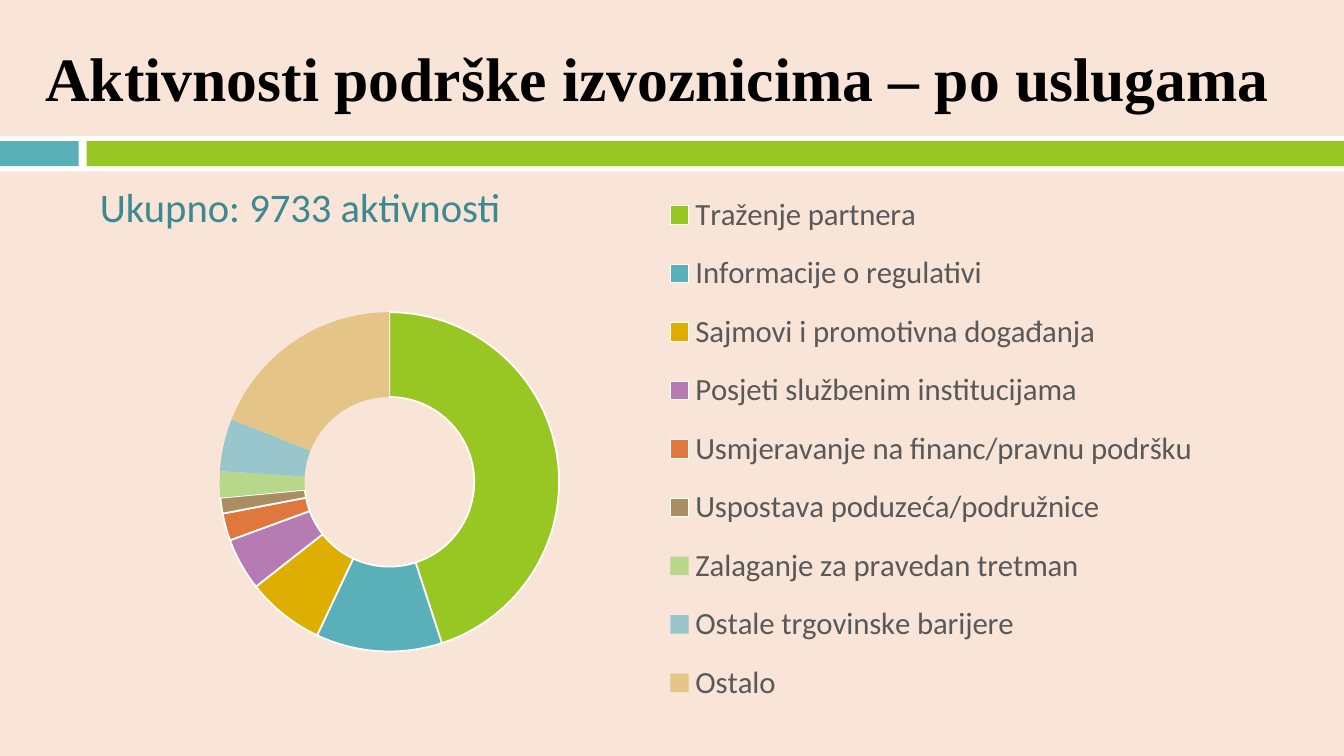
from dataclasses import dataclass

from lxml import etree
from pptx import Presentation
from pptx.chart.data import CategoryChartData
from pptx.dml.color import RGBColor
from pptx.enum.chart import XL_CHART_TYPE, XL_LEGEND_POSITION
from pptx.enum.shapes import MSO_SHAPE
from pptx.enum.text import MSO_ANCHOR, MSO_AUTO_SIZE, PP_ALIGN
from pptx.oxml import parse_xml
from pptx.oxml.ns import nsdecls, qn
from pptx.util import Inches, Pt

DOUGHNUT = XL_CHART_TYPE.DOUGHNUT
LEGEND_RIGHT = XL_LEGEND_POSITION.RIGHT
RECTANGLE = MSO_SHAPE.RECTANGLE
MIDDLE, TOP = MSO_ANCHOR.MIDDLE, MSO_ANCHOR.TOP
LEFT = PP_ALIGN.LEFT
NO_AUTOFIT = MSO_AUTO_SIZE.NONE


@dataclass(frozen=True)
class Theme:
    background: str = "F9E4D8"
    white: str = "FFFFFF"
    teal: str = "59B0B9"
    green: str = "98C723"
    title: str = "000000"
    total: str = "3D8991"
    legend: str = "595959"
    title_font: str = "Times New Roman"
    body_font: str = "Calibri"
    title_size: int = 44
    total_size: int = 29
    legend_size: int = 22


# Service, share of activities, colour
SERVICES = [
    ("Traženje partnera", 45, "98C723"),
    ("Informacije o regulativi", 12, "59B0B9"),
    ("Sajmovi i promotivna događanja", 7.4, "DEAE00"),
    ("Posjeti službenim institucijama", 5, "B77BB4"),
    ("Usmjeravanje na financ/pravnu podršku", 2.6, "E0773C"),
    ("Uspostava poduzeća/podružnice", 1.5, "A98D63"),
    ("Zalaganje za pravedan tretman", 2.5, "B7D78A"),
    ("Ostale trgovinske barijere", 5, "98C6CC"),
    ("Ostalo", 19, "E5C488"),
]
OUTLINED = 6  # the leading slices have a white edge


class SlideBuilder:
    """Places elements by percentages of the slide's width and height."""

    def __init__(self, deck, theme):
        self.deck, self.theme = deck, theme
        self.slide = deck.slides.add_slide(deck.slide_layouts[1])
        fill = self.slide.background.fill
        fill.solid()
        fill.fore_color.rgb = RGBColor.from_string(theme.background)

    def box(self, left, top, width, height):
        across, down = self.deck.slide_width, self.deck.slide_height
        return [int(share * side / 100) for share, side in
                zip((left, top, width, height), (across, down, across, down))]

    def style(self, font, face, size, color, bold=False):
        font.name, font.size, font.bold = face, Pt(size), bold
        font.color.rgb = RGBColor.from_string(color)

    def placeholder(self, index, area, text, anchor, *font_style, space=0):
        holder = self.slide.placeholders[index]
        holder.left, holder.top, holder.width, holder.height = self.box(*area)
        frame = holder.text_frame
        frame.word_wrap, frame.auto_size = True, NO_AUTOFIT
        frame.vertical_anchor = anchor
        line = frame.paragraphs[0]
        line.alignment, line.space_before = LEFT, Pt(space)
        properties = line._p.get_or_add_pPr()
        properties.set("marL", "0")
        properties.set("indent", "0")
        etree.SubElement(properties, qn("a:buNone"))
        run = line.add_run()
        run.text = text
        self.style(run.font, *font_style)

    def band(self, area, color):
        band = self.slide.shapes.add_shape(RECTANGLE, *self.box(*area))
        band.shadow.inherit = False
        band.fill.solid()
        band.fill.fore_color.rgb = RGBColor.from_string(color)
        band.line.fill.background()

    def layout(self, x, y, w, h, inner=False):
        target = '<c:layoutTarget val="inner"/>' if inner else ""
        modes = '<c:xMode val="edge"/><c:yMode val="edge"/>'
        sizes = "".join(f'<c:{key} val="{share}"/>'
                        for key, share in zip("xywh", (x, y, w, h)))
        return parse_xml(f'<c:layout {nsdecls("c")}><c:manualLayout>'
                         f'{target}{modes}{sizes}</c:manualLayout></c:layout>')

    def doughnut(self, area, services):
        theme = self.theme
        data = CategoryChartData()
        data.categories = [name for name, _, _ in services]
        data.add_series("Usluge", [share for _, share, _ in services])
        chart = self.slide.shapes.add_chart(DOUGHNUT, *self.box(*area), data).chart
        chart.has_title = False
        self.style(chart.font, theme.body_font, 10, theme.title)

        # Ring
        ring = chart.plots[0]
        ring.vary_by_categories = True
        ring._element.find(qn("c:holeSize")).set("val", "75")
        for index, (_, _, color) in enumerate(services):
            slice_format = ring.series[0].points[index].format
            slice_format.fill.solid()
            slice_format.fill.fore_color.rgb = RGBColor.from_string(color)
            if index < OUTLINED:
                slice_format.line.color.rgb = RGBColor.from_string(theme.white)
                slice_format.line.width = Pt(1.25)
            else:
                slice_format.line.fill.background()
        plot_area = chart._chartSpace.chart.plotArea
        for automatic in plot_area.findall(qn("c:layout")):
            plot_area.remove(automatic)
        plot_area.insert(0, self.layout(0.07, 0.25, 0.32, 0.62, inner=True))

        # Legend
        chart.has_legend = True
        legend = chart.legend
        legend.position, legend.include_in_layout = LEGEND_RIGHT, False
        self.style(legend.font, theme.body_font, theme.legend_size, theme.legend)
        for automatic in legend._element.findall(qn("c:layout")):
            legend._element.remove(automatic)
        legend._element.find(qn("c:legendPos")).addnext(
            self.layout(0.45, 0, 0.5, 1))


def main():
    deck = Presentation()
    deck.slide_width, deck.slide_height = Inches(13.33), Inches(7.5)
    theme = Theme()
    page = SlideBuilder(deck, theme)

    # Heading bands
    page.band((0, 18, 100, 4.67), theme.white)
    page.band((0, 18.67, 5.85, 3.33), theme.teal)
    page.band((6.45, 18.67, 93.55, 3.33), theme.green)

    # Title and total
    page.placeholder(0, (2.63, 5.4, 96.92, 9.6),
                     "Aktivnosti podrške izvoznicima – po uslugama", MIDDLE,
                     theme.title_font, theme.title_size, theme.title, True)
    page.placeholder(1, (6.68, 23.4, 90.25, 65.6),
                     "Ukupno: 9733 aktivnosti", TOP,
                     theme.body_font, theme.total_size, theme.total, space=7)

    # Activities by service
    page.doughnut((9.25, 23.2, 85.75, 72.4), SERVICES)
    deck.save("out.pptx")


if __name__ == "__main__":
    main()
